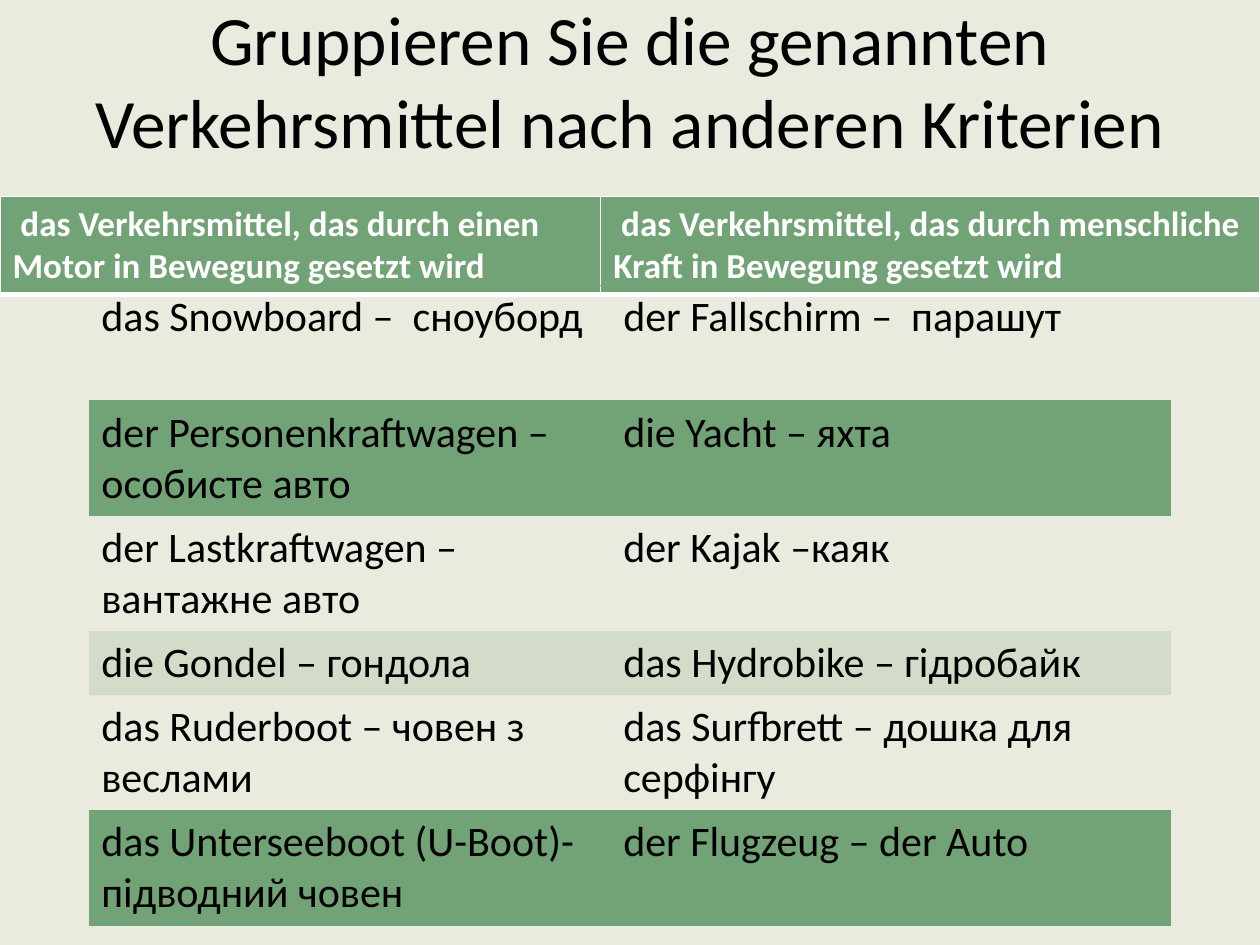
from lxml import etree
from pptx import Presentation
from pptx.dml.color import RGBColor
from pptx.enum import text
from pptx.oxml import ns
from pptx.util import Cm, Pt

FONT = "Calibri"
GREEN, WHITE, BLACK, CREAM = "72A376", "FFFFFF", "000000", "EAEBDE"
PLAIN_TABLE = "{2D5ABB26-0587-4C30-8999-92F81FD0307C}"

CRITERIA = [(" das Verkehrsmittel, das durch einen Motor in Bewegung gesetzt wird",
             " das Verkehrsmittel, das durch menschliche Kraft in Bewegung gesetzt wird")]
VEHICLES = [
    ("das Snowboard –  сноуборд", "der Fallschirm –  парашут"),
    ("der Personenkraftwagen – особисте авто", "die Yacht – яхта"),
    ("der Lastkraftwagen – вантажне авто", "der Kajak –каяк"),
    ("die Gondel – гондола", "das Hydrobike – гідробайк"),
    ("das Ruderboot – човен з веслами", "das Surfbrett – дошка для серфінгу"),
    ("das Unterseeboot (U-Boot)- підводний човен", "der Flugzeug – der Auto"),
]


def color(hex_code):
    return RGBColor.from_string(hex_code)


def write(frame, words, size, hex_code=BLACK, bold=False, align=text.PP_ALIGN.LEFT):
    frame.word_wrap = True
    paragraph = frame.paragraphs[0]
    paragraph.alignment = align
    run = paragraph.add_run()
    run.text = words
    run.font.name, run.font.size, run.font.bold = FONT, Pt(size), bold
    run.font.color.rgb = color(hex_code)


def set_borders(cell, borders):
    """Draw each given side (L, R, T, B) as (colour, points); hide the others."""
    properties = cell._tc.get_or_add_tcPr()
    for side in "LRTB":
        line = etree.SubElement(properties, ns.qn(f"a:ln{side}"))
        if side in borders:
            hex_code, points = borders[side]
            line.set("w", str(Pt(points)))
            solid = etree.SubElement(line, ns.qn("a:solidFill"))
            etree.SubElement(solid, ns.qn("a:srgbClr"), val=hex_code)
        else:
            etree.SubElement(line, ns.qn("a:noFill"))


def set_fill(cell, hex_code=None, opacity=100):
    if hex_code is None:
        cell.fill.background()
        return
    cell.fill.solid()
    cell.fill.fore_color.rgb = color(hex_code)
    if opacity < 100:
        tint = cell._tc.tcPr.find(".//" + ns.qn("a:srgbClr"))
        etree.SubElement(tint, ns.qn("a:alpha"), val=str(opacity * 1000))


def add_grid(slide, left, top, widths, heights, rows, **text_format):
    """Add an unstyled table and return it."""
    table = slide.shapes.add_table(len(rows), len(widths), left, top,
                                   sum(widths), sum(heights)).table
    table.first_row = table.horz_banding = False
    table._tbl.tblPr.find(ns.qn("a:tableStyleId")).text = PLAIN_TABLE
    for column, width in zip(table.columns, widths):
        column.width = width
    for r, (row, height) in enumerate(zip(rows, heights)):
        table.rows[r].height = height
        for c, words in enumerate(row):
            write(table.cell(r, c).text_frame, words, **text_format)
    return table


def add_title(slide, left, top, width, height):
    title = slide.shapes.title
    title.left, title.top, title.width, title.height = left, top, width, height
    frame = title.text_frame
    frame.auto_size = text.MSO_AUTO_SIZE.NONE
    frame.vertical_anchor = text.MSO_ANCHOR.MIDDLE
    write(frame, "Gruppieren Sie die genannten Verkehrsmittel nach anderen Kriterien",
          39.6, align=text.PP_ALIGN.CENTER)


def add_criteria(slide, left, top, width, height):
    first = Cm(12.11)
    table = add_grid(slide, left, top, [first, width - first], [height], CRITERIA,
                     size=20, hex_code=WHITE, bold=True)
    for cell in table.iter_cells():
        set_borders(cell, {"L": (WHITE, 1), "R": (WHITE, 1),
                           "T": (WHITE, 1), "B": (WHITE, 3)})
        set_fill(cell, GREEN)


def add_vehicles(slide, left, top, width):
    first = Cm(10.52)
    two_lines, one_line = Cm(2.32), Cm(1.29)
    heights = [two_lines] * 3 + [one_line] + [two_lines] * 2
    table = add_grid(slide, left, top, [first, width - first], heights, VEHICLES, size=24)
    rule = (GREEN, 1)
    for r in range(len(VEHICLES)):
        # Rules frame the first row and close the last one
        borders = {0: {"T": rule, "B": rule}, 1: {"T": rule},
                   len(VEHICLES) - 1: {"B": rule}}.get(r, {})
        for cell in table.rows[r].cells:
            set_borders(cell, borders)
            set_fill(cell, GREEN if r % 2 else None, opacity=20)


def main():
    deck = Presentation()
    deck.slide_width, deck.slide_height = Cm(25.4), Cm(19.05)
    slide = deck.slides.add_slide(deck.slide_layouts[5])
    slide.background.fill.solid()
    slide.background.fill.fore_color.rgb = color(CREAM)

    add_title(slide, 0, 0, deck.slide_width, Cm(3.18))
    add_criteria(slide, 0, Cm(3.96), deck.slide_width, Cm(1.96))
    add_vehicles(slide, Cm(1.79), Cm(5.76), Cm(21.82))
    deck.save("out.pptx")


if __name__ == "__main__":
    main()
